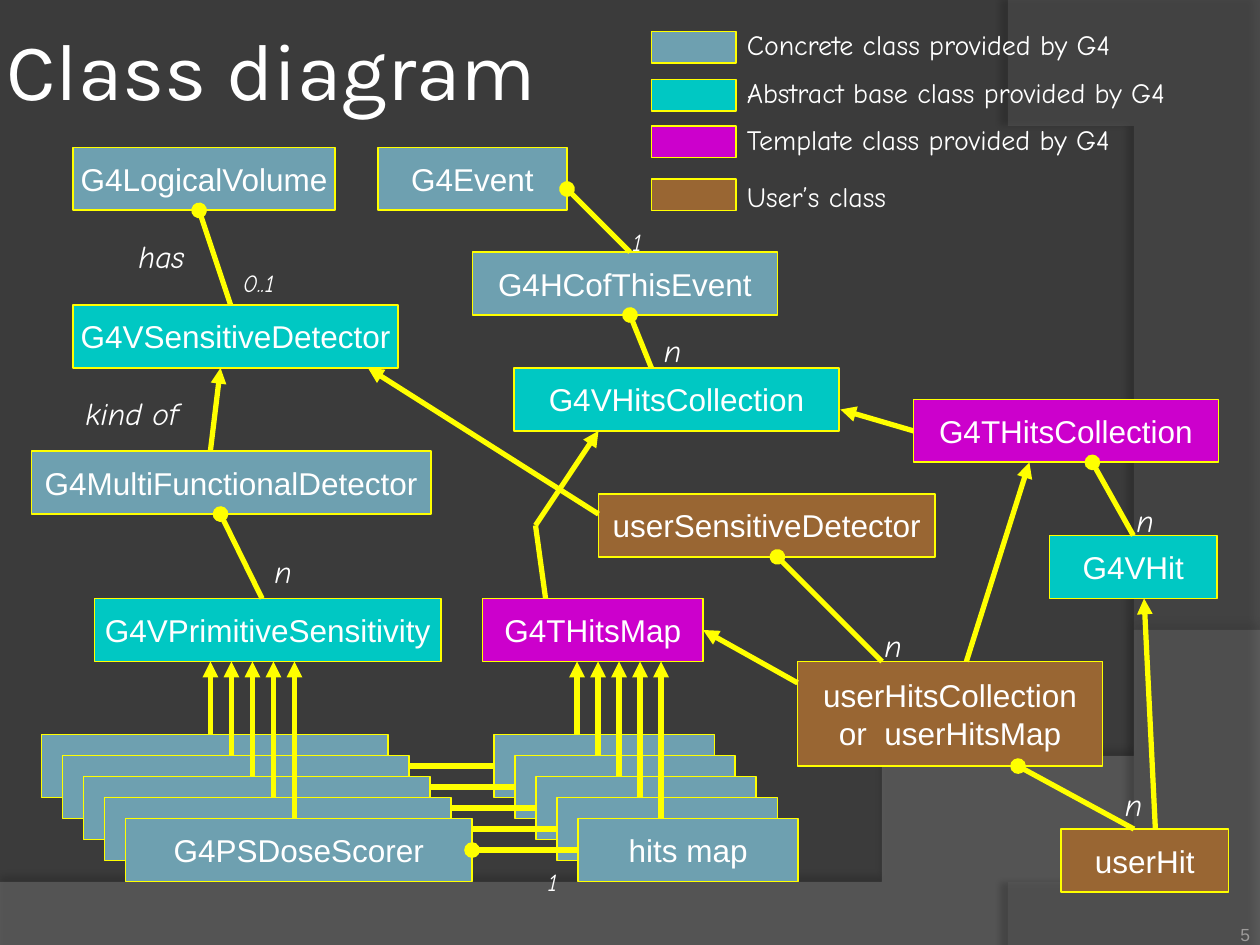
from lxml.etree import SubElement
from pptx import Presentation
from pptx.dml.color import RGBColor
from pptx.enum.shapes import MSO_CONNECTOR, MSO_SHAPE
from pptx.enum.text import MSO_ANCHOR, PP_ALIGN
from pptx.oxml.ns import qn
from pptx.util import Inches, Pt

CONCRETE, ABSTRACT, TEMPLATE, USER = "6EA0B0", "00C8C3", "CC00CC", "996633"
YELLOW, WHITE, GREY, BACK = "FFFF00", "FFFFFF", "9D9B9A", "3B3B3B"

CLASSES = [
    ("G4LogicalVolume", CONCRETE, 0.58, 1.17, 2.08, 0.5),
    ("G4VSensitiveDetector", ABSTRACT, 0.58, 2.42, 2.58, 0.5),
    ("G4MultiFunctionalDetector", CONCRETE, 0.25, 3.58, 3.17, 0.5),
    ("userSensitiveDetector", USER, 4.75, 3.92, 2.67, 0.5),
    ("G4Event", CONCRETE, 3, 1.17, 1.5, 0.5),
    ("G4HCofThisEvent", CONCRETE, 3.75, 2, 2.42, 0.5),
    ("G4VHitsCollection", ABSTRACT, 4.08, 2.92, 2.58, 0.5),
    ("G4THitsCollection", TEMPLATE, 7.25, 3.17, 2.42, 0.5),
    ("G4THitsMap", TEMPLATE, 3.83, 4.75, 1.75, 0.5),
    ("userHitsCollection\nor  userHitsMap", USER, 6.33, 5.25, 2.42, 0.83),
    ("G4VHit", ABSTRACT, 8.33, 4.25, 1.33, 0.5),
    ("userHit", USER, 8.42, 6.58, 1.33, 0.5),
    ("G4VPrimitiveSensitivity", ABSTRACT, 0.75, 4.75, 2.75, 0.5),
]
LINKS = [
    ("oval", 1.58, 1.67, 1.83, 2.42),
    ("triangle", 1.75, 2.92, 1.67, 3.58),
    ("triangle", 2.92, 2.92, 4.75, 4.08),
    ("oval", 4.5, 1.5, 5, 2),
    ("triangle", 6.67, 3.25, 7.25, 3.42),
    ("triangle", 4.75, 3.42, 4.25, 4.17),
    ("triangle", 8.17, 3.67, 7.67, 5.25),
    ("oval", 8.67, 3.67, 9, 4.25),
    ("oval", 8.08, 6.08, 9, 6.58),
    ("triangle", 9.08, 4.75, 9.17, 6.58),
    ("oval", 1.75, 4.08, 2.08, 4.75),
    (None, 4.25, 4.17, 4.33, 4.75),
    ("oval", 6.17, 4.42, 7, 5.25),
    ("oval", 5, 2.5, 5.17, 2.92),
    ("triangle", 5.58, 5, 6.33, 5.42),
]
LEGEND = [
    ("Concrete class provided by G4", CONCRETE, 0.25, 0.17),
    ("Abstract base class provided by G4", ABSTRACT, 0.63, 0.55),
    ("Template class provided by G4", TEMPLATE, 1, 0.92),
    ("User’s class", USER, 1.42, 1.38),
]
LABELS = [
    ("has", 18, 1, 1.83, 1), ("kind of", 18, 0.58, 3.08, 1.17),
    ("0..1", 14, 1.83, 2.08, 0.67), ("n", 18, 2.08, 4.33, 0.42),
    ("1", 14, 4.25, 6.83, 0.42), ("n", 18, 5.17, 2.58, 0.42),
    ("n", 18, 8.83, 6.18, 0.42), ("n", 18, 8.92, 3.93, 0.42),
    ("n", 18, 6.92, 4.92, 0.42), ("1", 14, 4.92, 1.75, 0.42),
]
STACK_COUNT, STACK_STEP, STACK_TOP = 5, 1 / 6, 5.83
STACK_BOXES = [("G4PSDoseScorer", 0.33, 2.75), ("hits map", 3.92, 1.75)]
STACK_ARROWS = [1.67, 4.58]
ARROW_TOP = 5.25

BOX_FRAME = {"word_wrap": False, "vertical_anchor": MSO_ANCHOR.MIDDLE}
BOX_FONT = {"name": "Arial", "size": Pt(18)}
NOTE_FONT = {"name": "Comic Neue", "size": Pt(16)}
NO_MARGIN = dict.fromkeys(
    ("margin_left", "margin_right", "margin_top", "margin_bottom"), 0)
TITLE_MARGIN = dict.fromkeys(NO_MARGIN, Inches(0.05))


def rgb(value):
    return RGBColor.from_string(value)


def apply(obj, values):
    for key, value in values.items():
        setattr(obj, key, value)


def write(sp, text, font, frame, align=PP_ALIGN.LEFT, color=WHITE):
    tf = sp.text_frame
    apply(tf, frame)
    p = tf.paragraphs[0]
    p.alignment = align
    for i, part in enumerate(text.split("\n")):
        if i:
            p.add_line_break()
        r = p.add_run()
        r.text = part
        apply(r.font, font)
        r.font.color.rgb = rgb(color)


def add_text(shapes, at, text, font, frame=None, **kw):
    sp = shapes.add_textbox(*map(Inches, at))
    write(sp, text, font, {"word_wrap": True, **(frame or {})}, **kw)


def add_box(shapes, at, color, text=None):
    sp = shapes.add_shape(MSO_SHAPE.RECTANGLE, *map(Inches, at))
    sp.shadow.inherit = False
    sp.fill.solid()
    sp.fill.fore_color.rgb = rgb(color)
    sp.line.color.rgb = rgb(YELLOW)
    sp.line.width = Pt(1)
    if text:
        write(sp, text, BOX_FONT, BOX_FRAME, PP_ALIGN.CENTER)
    return sp


def join(connect, x, y, boxes):
    for sp in boxes:
        cx, cy = sp.left + sp.width / 2, sp.top + sp.height / 2
        sides = [(cx, sp.top), (sp.left, cy),
                 (cx, sp.top + sp.height), (sp.left + sp.width, cy)]
        for i, (sx, sy) in enumerate(sides):
            if max(abs(sx - Inches(x)), abs(sy - Inches(y))) < Inches(0.02):
                connect(sp, i)
                return


def add_link(shapes, head, x1, y1, x2, y2, boxes):
    c = shapes.add_connector(MSO_CONNECTOR.STRAIGHT, *map(Inches, (x1, y1, x2, y2)))
    c.line.color.rgb = rgb(YELLOW)
    c.line.width = Pt(3)
    if head:
        SubElement(c.line._get_or_add_ln(), qn("a:headEnd"), type=head)
    SubElement(c._element.spPr, qn("a:effectLst"))
    join(c.begin_connect, x1, y1, boxes)
    join(c.end_connect, x2, y2, boxes)


def bezier(a, b, c, d, n=40):
    for t in (i / n for i in range(n + 1)):
        u = 1 - t
        yield tuple(u**3 * i + 3 * u * u * t * j + 3 * u * t * t * k + t**3 * m
                    for i, j, k, m in zip(a, b, c, d))


def add_wave(shapes, points, color, opacity, shade, blur, dist, angle):
    fb = shapes.build_freeform(*points[0], scale=Inches(1))
    fb.add_line_segments(points[1:], close=True)
    sp = fb.convert_to_shape()
    sp.fill.solid()
    sp.fill.fore_color.rgb = rgb(color)
    sp.line.fill.background()
    sp.shadow.inherit = False
    spPr = sp._element.spPr
    SubElement(spPr.find(".//" + qn("a:srgbClr")), qn("a:alpha"), val=str(opacity * 1000))
    shadow = SubElement(spPr.find(qn("a:effectLst")), qn("a:outerShdw"),
                        blurRad=str(Pt(blur)), dist=str(Pt(dist)),
                        dir=str(angle * 60000), rotWithShape="0")
    clr = SubElement(shadow, qn("a:srgbClr"), val="000000")
    SubElement(clr, qn("a:alpha"), val=str(shade * 1000))


def main():
    prs = Presentation()
    prs.slide_width, prs.slide_height = Inches(10), Inches(7.5)
    s = prs.slides.add_slide(prs.slide_layouts[6])
    s.background.fill.solid()
    s.background.fill.fore_color.rgb = rgb(BACK)
    shapes = s.shapes

    floor = [(0, 7.5), (10, 7.5), *bezier((10, 5.2), (5.59, 7.29), (3.91, 7.19), (0, 7.05))]
    side = [(10, 0.02), (10, 7.5), *bezier((8.21, 7.5), (9.35, 6.19), (10.18, 3), (8, 0))]
    add_wave(shapes, floor, "7F7F7F", 45, 35, 4, 3.5, 270)
    add_wave(shapes, side, "5E5E5E", 40, 45, 4, 4, 180)

    add_text(shapes, (0, 0, 5.08, 1.09), "Class diagram",
             {"name": "Karla", "size": Pt(46)},
             {"vertical_anchor": MSO_ANCHOR.MIDDLE, **TITLE_MARGIN})
    add_text(shapes, (9.17, 7.15, 0.75, 0.35), "5", {"name": "Arial", "size": Pt(10)},
             {"vertical_anchor": MSO_ANCHOR.BOTTOM, **NO_MARGIN},
             align=PP_ALIGN.RIGHT, color=GREY)

    for text, color, box_top, text_top in LEGEND:
        add_box(shapes, (5.17, box_top, 0.67, 0.25), color)
        add_text(shapes, (5.83, text_top, 4.33, 0.37), text, NOTE_FONT)

    boxes = [add_box(shapes, at, color, text) for text, color, *at in CLASSES]
    for link in LINKS:
        add_link(shapes, *link, boxes)

    shifts = [i * STACK_STEP for i in range(STACK_COUNT)]
    for d in shifts:
        group = shapes.add_group_shape().shapes
        top = STACK_TOP + d
        pair = [add_box(group, (x + d, top, w, 0.5), CONCRETE, text)
                for text, x, w in STACK_BOXES]
        (_, x, w), (_, x_map, _) = STACK_BOXES
        add_link(group, "oval", x + w + d, top + 0.25, x_map + d, top + 0.25, pair)
    for x in STACK_ARROWS:
        for d in shifts:
            add_link(shapes, "triangle", x + d, ARROW_TOP, x + d, STACK_TOP + d, boxes)

    for text, size, x, y, w in LABELS:
        add_text(shapes, (x, y, w, 0.4 if size == 18 else 0.33), text,
                 {**NOTE_FONT, "size": Pt(size), "italic": True})
    prs.save("out.pptx")


if __name__ == "__main__":
    main()
